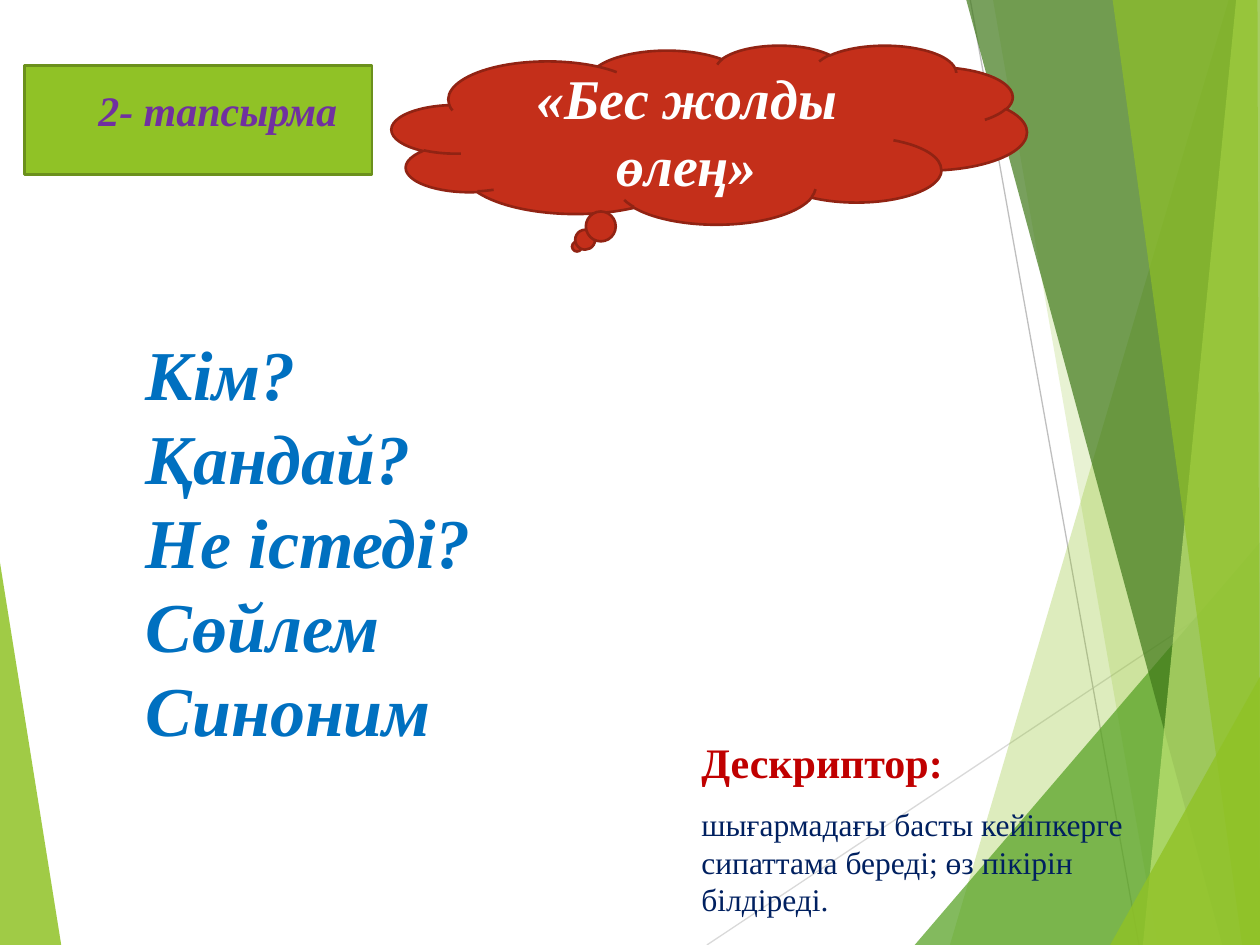
from dataclasses import dataclass

import lxml.etree
import pptx
import pptx.dml.color
import pptx.enum.shapes
import pptx.enum.text
import pptx.oxml.ns
import pptx.util

Cm = pptx.util.Cm
Pt = pptx.util.Pt
RGBColor = pptx.dml.color.RGBColor
Shapes = pptx.enum.shapes.MSO_SHAPE
Align = pptx.enum.text.PP_ALIGN
Anchor = pptx.enum.text.MSO_ANCHOR
qn = pptx.oxml.ns.qn

LIME = RGBColor(0x90, 0xC2, 0x26)
PALE_LIME = RGBColor(0xC0, 0xE4, 0x74)
GREEN = RGBColor(0x54, 0xA0, 0x21)
DARK_GREEN = RGBColor(0x3F, 0x78, 0x19)
OLIVE = RGBColor(0x6B, 0x90, 0x1C)
RED = RGBColor(0xC4, 0x2F, 0x1A)
MAROON = RGBColor(0x91, 0x23, 0x13)
CRIMSON = RGBColor(0xC0, 0x00, 0x00)
PURPLE = RGBColor(0x70, 0x30, 0xA0)
BLUE = RGBColor(0x00, 0x70, 0xC0)
NAVY = RGBColor(0x00, 0x20, 0x60)
WHITE = RGBColor(0xFF, 0xFF, 0xFF)
LIGHT_GRAY = RGBColor(0xD9, 0xD9, 0xD9)
GRAY = RGBColor(0xBF, 0xBF, 0xBF)
FONT = "Times New Roman"
WIDTH, HEIGHT = 25.4, 19.05
EDGE = 25.43


@dataclass(frozen=True)
class Facet:
    points: tuple[tuple[float, float], ...]
    color: RGBColor
    opacity: int


@dataclass(frozen=True)
class Ray:
    start: tuple[float, float]
    end: tuple[float, float]
    color: RGBColor


@dataclass(frozen=True)
class Style:
    size: int
    color: RGBColor
    bold: bool = True
    italic: bool = True


@dataclass(frozen=True)
class Line:
    text: str
    style: Style
    space_before: int = 0


LEFT_FACET = Facet(((-0.03, 11.15), (1.24, 19.08), (-0.03, HEIGHT)), LIME, 85)
RAYS = (
    Ray((14.25, HEIGHT), (EDGE, 11.61), LIGHT_GRAY),
    Ray((19.56, 0), (22.96, HEIGHT), GRAY),
)
RIGHT_FACETS = (
    Facet(((24.77, 0), (19.15, HEIGHT), (EDGE, HEIGHT), (EDGE, 0)), LIME, 30),
    Facet(((20.02, 0), (23.34, HEIGHT), (EDGE, HEIGHT), (EDGE, 0)), LIME, 20),
    Facet(((18.44, HEIGHT), (EDGE, 10.9), (EDGE, HEIGHT)), GREEN, 72),
    Facet(((19.48, 0), (24.64, HEIGHT), (EDGE, HEIGHT), (EDGE, 0)), DARK_GREEN, 70),
    Facet(((24.92, 0), (23.04, HEIGHT), (EDGE, HEIGHT), (EDGE, 0)), PALE_LIME, 70),
    Facet(((22.43, 0), (25.04, HEIGHT), (WIDTH, HEIGHT), (25.35, 0)), LIME, 65),
    Facet(((22.38, HEIGHT), (EDGE, 13.59), (EDGE, HEIGHT)), LIME, 80),
)
QUESTIONS = ("Кім?", "Қандай?", "Не істеді?", "Сөйлем", "Синоним")


def draw_facet(page, facet: Facet) -> None:
    corners = [(Cm(x), Cm(y)) for x, y in facet.points]
    builder = page.shapes.build_freeform(*corners[0])
    builder.add_line_segments(corners[1:])
    shape = builder.convert_to_shape()
    shape.shadow.inherit = False
    shape.fill.solid()
    shape.fill.fore_color.rgb = facet.color
    shape.line.fill.background()
    color = shape.fill._xPr.find(qn("a:solidFill"))[0]
    lxml.etree.SubElement(color, qn("a:alpha"), val=str(facet.opacity * 1000))


def draw_ray(page, ray: Ray) -> None:
    connector = page.shapes.add_connector(
        pptx.enum.shapes.MSO_CONNECTOR.STRAIGHT,
        *map(Cm, ray.start + ray.end),
    )
    connector.line.color.rgb = ray.color
    connector.line.width = Pt(0.75)
    properties = connector._element.find(qn("p:spPr"))
    lxml.etree.SubElement(properties, qn("a:effectLst"))


def draw_shape(page, kind, frame: tuple[float, ...], fill: RGBColor, outline: RGBColor):
    shape = page.shapes.add_shape(kind, *map(Cm, frame))
    shape.shadow.inherit = False
    shape.fill.solid()
    shape.fill.fore_color.rgb = fill
    shape.line.color.rgb = outline
    shape.line.width = Pt(1.5)
    return shape


def write(box, lines: list[Line], align=Align.LEFT, wrap: bool = True) -> None:
    text = box.text_frame
    text.word_wrap = wrap
    for index, line in enumerate(lines):
        para = text.add_paragraph() if index else text.paragraphs[0]
        para.alignment = align
        if line.space_before:
            para.space_before = Pt(line.space_before)
        span = para.add_run()
        span.text = line.text
        span.font.name = FONT
        span.font.size = Pt(line.style.size)
        span.font.bold = line.style.bold
        span.font.italic = line.style.italic
        span.font.color.rgb = line.style.color


def add_text(page, frame: tuple[float, ...], lines: list[Line], **layout) -> None:
    write(page.shapes.add_textbox(*map(Cm, frame)), lines, **layout)


def main() -> None:
    deck = pptx.Presentation()
    deck.slide_width, deck.slide_height = Cm(WIDTH), Cm(HEIGHT)
    page = deck.slides.add_slide(deck.slide_layouts[6])

    draw_facet(page, LEFT_FACET)
    for ray in RAYS:
        draw_ray(page, ray)
    for facet in RIGHT_FACETS:
        draw_facet(page, facet)

    draw_shape(page, Shapes.RECTANGLE, (0.5, 1.32, 7, 2.2), LIME, OLIVE)
    cloud = draw_shape(page, Shapes.CLOUD_CALLOUT, (7.9, 0.91, 12.8, 3.61), RED, MAROON)
    cloud.text_frame.vertical_anchor = Anchor.MIDDLE
    write(cloud, [Line("«Бес жолды өлең»", Style(32, WHITE))], Align.CENTER)

    add_text(page, (1.7, 1.57, 5.38, 1.27), [Line("2- тапсырма", Style(24, PURPLE))],
             align=Align.CENTER, wrap=False)
    add_text(page, (2.69, 6.53, 8.2, 8.81),
             [Line(question, Style(40, BLUE)) for question in QUESTIONS])
    add_text(page, (13.89, 14.73, 9.4, 3.99), [
        Line("Дескриптор:", Style(24, CRIMSON, italic=False)),
        Line("шығармадағы басты кейіпкерге сипаттама береді; өз пікірін білдіреді.",
             Style(18, NAVY, bold=False, italic=False), space_before=10),
    ])
    deck.save("out.pptx")


if __name__ == "__main__":
    main()
